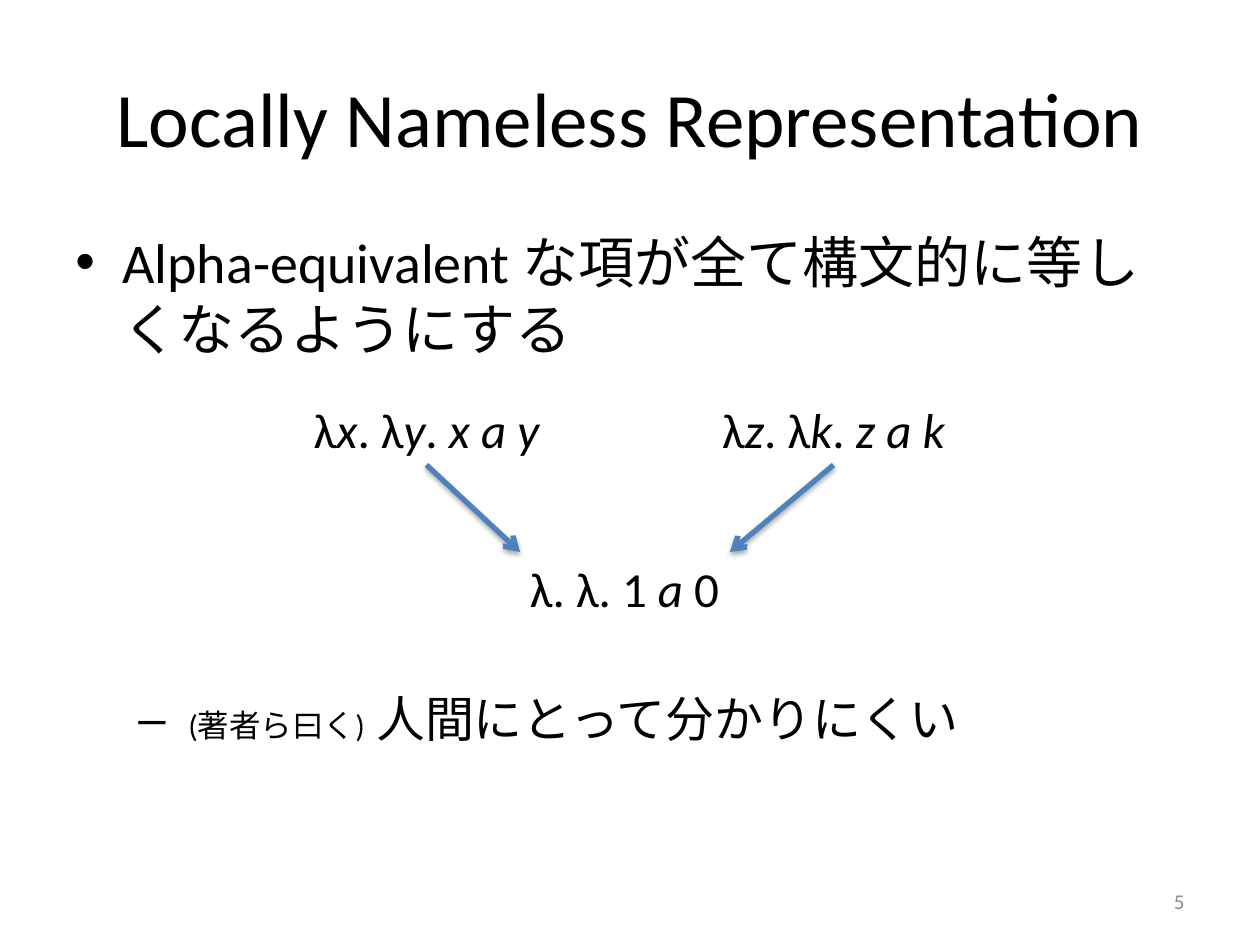
from dataclasses import dataclass

import pptx
import pptx.dml.color
import pptx.enum.shapes
import pptx.enum.text
import pptx.oxml
import pptx.oxml.ns
import pptx.util

PX_PER_INCH = 126
FONT = "Calibri"
COLORS = {"text": "000000", "number": "8C8C8C", "arrow": "4F81BD", "shadow": "000000"}
ALIGN = pptx.enum.text.PP_ALIGN
ANCHOR = pptx.enum.text.MSO_ANCHOR
BOTTOM = 2


@dataclass
class Run:
    text: str
    size: int = 28
    italic: bool = False
    color: str = "text"


@dataclass
class Bullet:
    char: str
    level: int
    margin: int
    hanging: int
    before: int
    runs: list[Run]


@dataclass
class Term:
    left: int
    top: int
    text: str  # variables are marked with underscores: λ_x_


def px(n: int) -> int:
    return round(n * pptx.util.Inches(1) / PX_PER_INCH)


def rgb(name: str) -> pptx.dml.color.RGBColor:
    return pptx.dml.color.RGBColor.from_string(COLORS[name])


def add_runs(p, runs: list[Run]) -> None:
    for run in runs:
        r = p.add_run()
        r.text = run.text
        r.font.name = FONT
        r.font.size = pptx.util.Pt(run.size)
        r.font.italic = run.italic
        r.font.color.rgb = rgb(run.color)


def add_box(s, left: int, top: int, width: int, height: int):
    sp = s.shapes.add_textbox(px(left), px(top), px(width), px(height))
    sp.text_frame.word_wrap = True
    return sp


def add_bullet(p, bullet: Bullet) -> None:
    p.level = bullet.level
    p.space_before = pptx.util.Pt(bullet.before)
    add_runs(p, bullet.runs)
    pPr = p._p.get_or_add_pPr()
    pPr.set("marL", str(px(bullet.margin)))
    pPr.set("indent", str(-px(bullet.hanging)))
    ns = pptx.oxml.ns.nsdecls("a")
    pPr.append(pptx.oxml.parse_xml(f'<a:buFont {ns} typeface="Arial"/>'))
    pPr.append(pptx.oxml.parse_xml(f'<a:buChar {ns} char="{bullet.char}"/>'))


def add_term(s, term: Term):
    sp = add_box(s, term.left, term.top, 367, 72)
    p = sp.text_frame.paragraphs[0]
    p.alignment = ALIGN.CENTER
    parts = term.text.split("_")
    add_runs(p, [Run(t, italic=i % 2 == 1) for i, t in enumerate(parts) if t])
    return sp


def add_arrow(s, source, x: int, y: int) -> None:
    """Arrow from the bottom of a term to a point, with a soft shadow."""
    line = s.shapes.add_connector(
        pptx.enum.shapes.MSO_CONNECTOR.STRAIGHT, 0, 0, px(x), px(y))
    line.begin_connect(source, BOTTOM)
    line.line.color.rgb = rgb("arrow")
    line.line.width = pptx.util.Pt(3)
    ns = pptx.oxml.ns.nsdecls("a")
    line.line._get_or_add_ln().append(
        pptx.oxml.parse_xml(f'<a:tailEnd {ns} type="arrow"/>'))
    line._element.spPr.append(pptx.oxml.parse_xml(
        f'<a:effectLst {ns}><a:outerShdw blurRad="40000" dist="23000" dir="5400000" '
        f'rotWithShape="0"><a:srgbClr val="{COLORS["shadow"]}"><a:alpha val="35000"/>'
        '</a:srgbClr></a:outerShdw></a:effectLst>'))


BULLETS = [
    Bullet("•", 0, 47, 47, 0,
           [Run("Alpha-equivalent な項が全て構文的に等しくなるようにする", 32)]),
    Bullet("–", 1, 102, 39, 187,
           [Run(" "), Run("(著者ら曰く)", 18), Run(" 人間にとって分かりにくい")]),
]
# Each named term with the end point of its arrow
NAMED_TERMS = [
    (Term(243, 393, "λ_x_. λ_y_. _x a y_"), (520, 552)),
    (Term(650, 393, "λ_z_. λ_k_. _z a k_"), (730, 552)),
]
NAMELESS_TERM = Term(441, 552, "λ. λ. 1 _a_ 0")


def main() -> None:
    prs = pptx.Presentation()
    prs.slide_width, prs.slide_height = pptx.util.Inches(10), pptx.util.Inches(7.5)
    s = prs.slides.add_slide(prs.slide_layouts[5])

    # Title
    title = s.shapes.title
    title.left, title.top, title.width, title.height = px(63), px(38), px(1134), px(158)
    title.text_frame.vertical_anchor = ANCHOR.MIDDLE
    p = title.text_frame.paragraphs[0]
    p.alignment = ALIGN.CENTER
    add_runs(p, [Run("Locally Nameless Representation", 44)])

    # Bullets, with room between them for the diagram
    tf = add_box(s, 63, 221, 1134, 624).text_frame
    for i, bullet in enumerate(BULLETS):
        add_bullet(tf.add_paragraph() if i else tf.paragraphs[0], bullet)

    # Diagram
    add_term(s, NAMELESS_TERM)
    for term, (x, y) in NAMED_TERMS:
        add_arrow(s, add_term(s, term), x, y)

    # Slide number
    tf = add_box(s, 903, 876, 294, 50).text_frame
    tf.vertical_anchor = ANCHOR.MIDDLE
    p = tf.paragraphs[0]
    p.alignment = ALIGN.RIGHT
    add_runs(p, [Run("5", 12, color="number")])

    prs.save("out.pptx")


if __name__ == "__main__":
    main()
